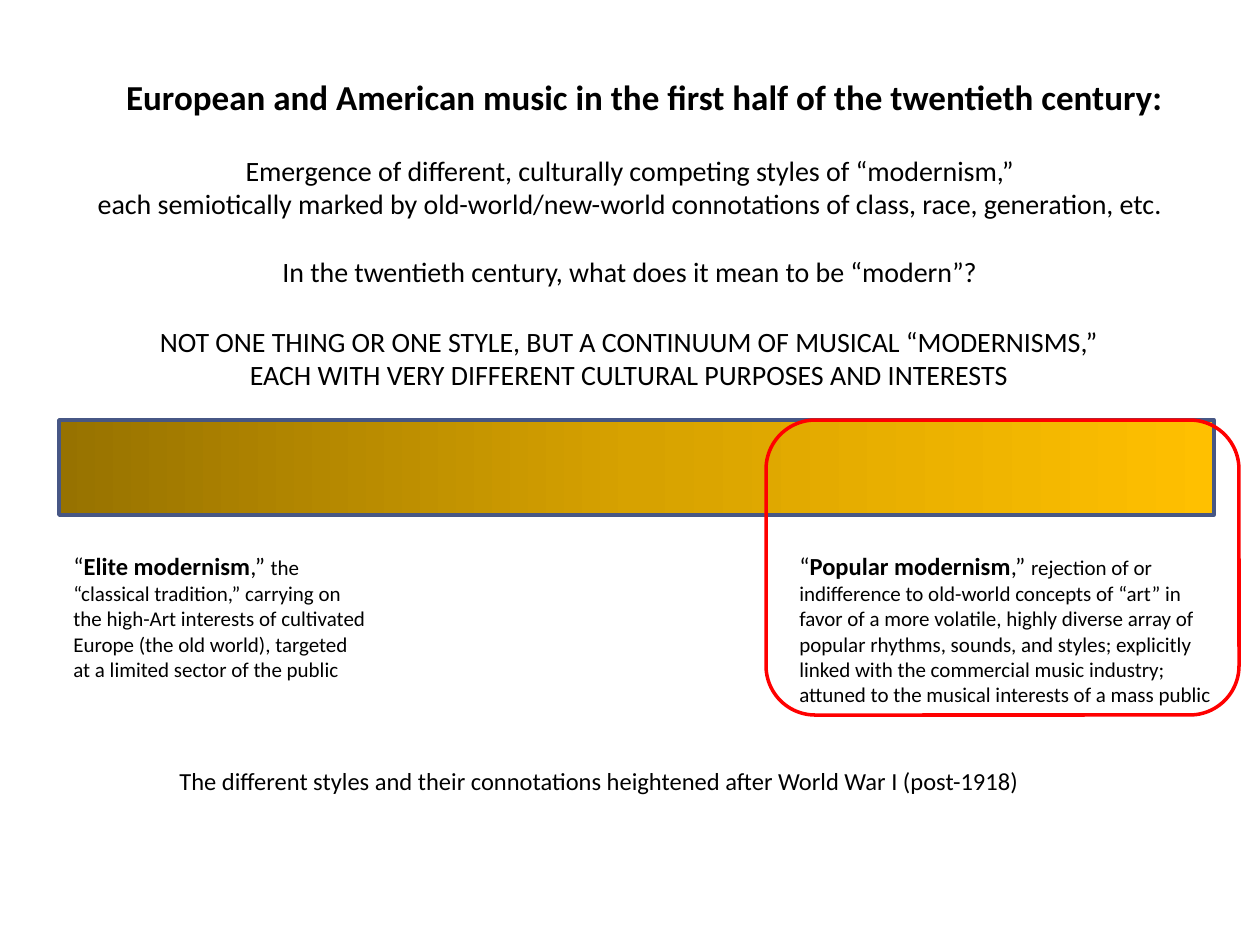
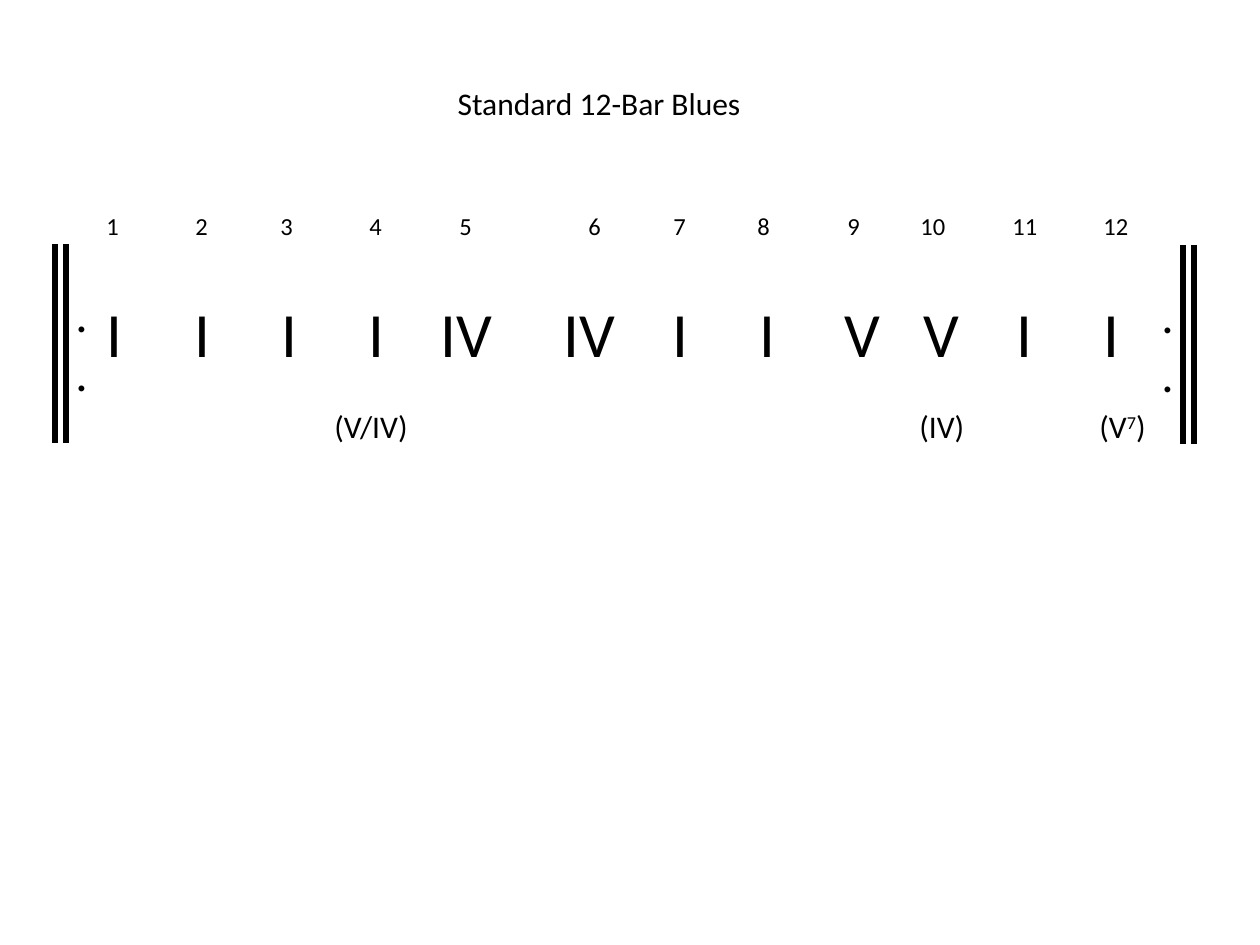
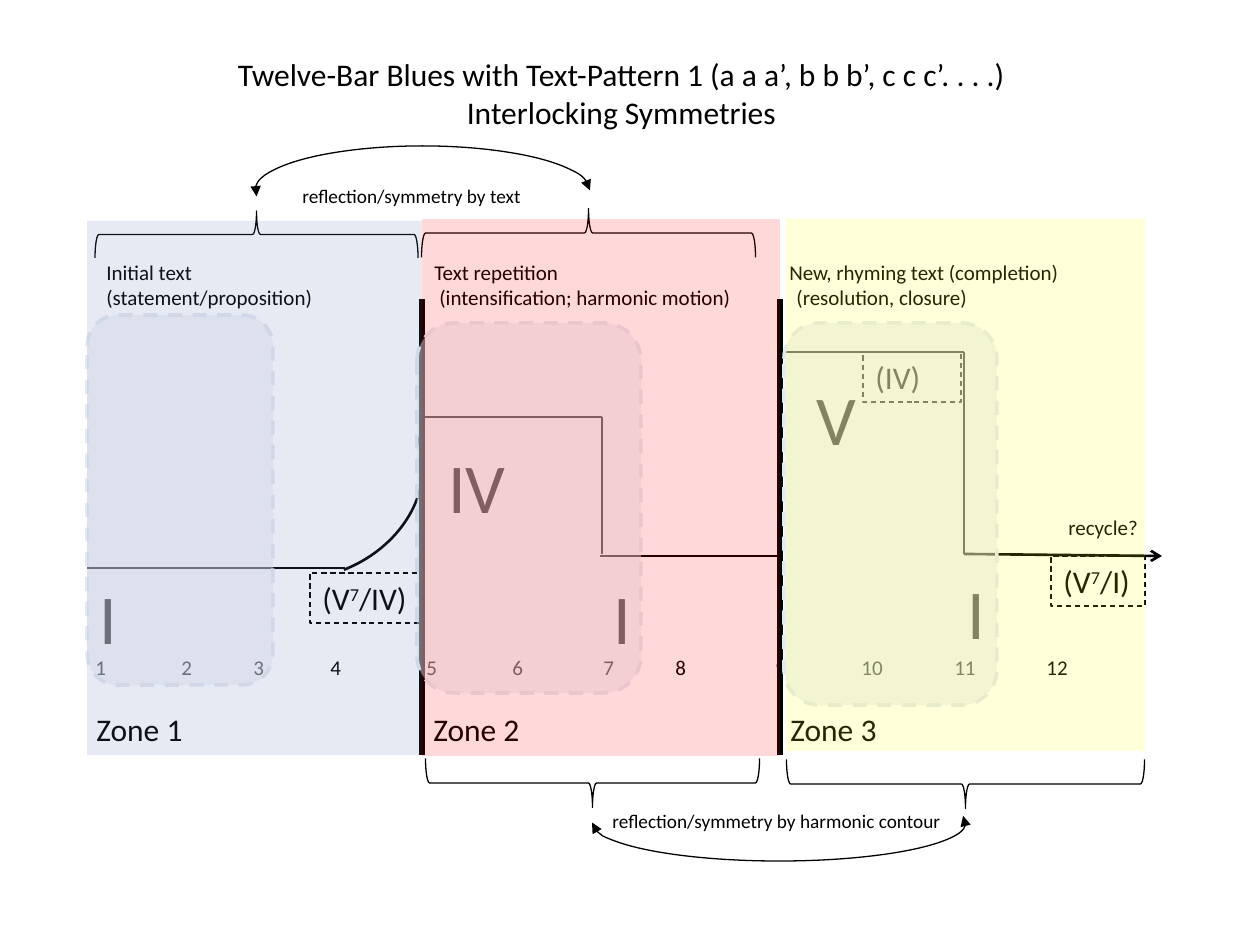
from copy import deepcopy

from lxml.etree import SubElement
from pptx import Presentation
from pptx.dml.color import RGBColor
from pptx.enum.dml import MSO_LINE
from pptx.enum.shapes import MSO_CONNECTOR, MSO_SHAPE
from pptx.enum.text import MSO_ANCHOR, MSO_AUTO_SIZE, PP_ALIGN
from pptx.oxml.ns import qn
from pptx.util import Emu, Pt

PX = 7257.14  # EMU in one px, 126 px to the inch
BLACK, WHITE, RED, YELLOW, BLUE = "000000", "FFFFFF", "FF0000", "FFFF00", "6076B4"
HALO, BAR_EDGE = "E4E9EF", "475785"
GOLDS = ["977200", "D7A200", "FFC000"]
FONT = "Calibri"
CENTER = PP_ALIGN.CENTER
SEVENTH = ("7", {"superscript": True})


def px(length):
    return Emu(round(length * PX))


def color(value):
    return RGBColor.from_string(value)


def format_run(run, size, superscript=False, **extra):
    values = {"name": FONT, "size": Pt(size), "bold": False, **extra}
    for name, value in values.items():
        setattr(run.font, name, value)
    run.font.color.rgb = color(BLACK)
    if superscript:
        run.font._element.set("baseline", "30000")


def write(shape, paragraphs, size, align=PP_ALIGN.LEFT, tabs=(), gaps=(), wrap=True, bold=False):
    """Each paragraph is a string or a list of strings and (string, format) runs.

    tabs holds one list of stops per paragraph; gaps lists paragraphs set off by a line.
    """
    frame = shape.text_frame
    values = {"word_wrap": wrap, "vertical_anchor": MSO_ANCHOR.TOP, "auto_size": MSO_AUTO_SIZE.NONE}
    for name, value in values.items():
        setattr(frame, name, value)
    for index, runs in enumerate(paragraphs):
        paragraph = frame.add_paragraph() if index else frame.paragraphs[0]
        if tabs:
            tab_list = SubElement(paragraph._p.get_or_add_pPr(), qn("a:tabLst"))
            for stop in tabs[index]:
                SubElement(tab_list, qn("a:tab"), pos=str(px(stop)), algn="l")
        paragraph.alignment = align
        if index in gaps:
            paragraph.space_before = Pt(size * 1.22)
        for item in [runs] if isinstance(runs, str) else runs:
            text, extra = (item, {}) if isinstance(item, str) else item
            run = paragraph.add_run()
            run.text = text
            format_run(run, **{"size": size, "bold": bold, **extra})


def style_line(shape, line_color, width, dash=None, head=None, tail=None):
    if line_color is None:
        shape.line.fill.background()
        return
    shape.line.color.rgb = color(line_color)
    shape.line.width = Pt(width)
    if dash:
        shape.line.dash_style = dash
    outline = shape._element.spPr.find(qn("a:ln"))
    for tag, kind in (("a:headEnd", head), ("a:tailEnd", tail)):
        if kind:
            SubElement(outline, qn(tag), type=kind)


class Region:
    """Draws on a slide, with places counted from the region's own corner."""

    def __init__(self, slide, left=0, top=0):
        self.slide, self.left, self.top = slide, left, top

    def place(self, left, top, width, height):
        return px(self.left + left), px(self.top + top), px(width), px(height)

    def text(self, box, paragraphs, size, **options):
        shape = self.slide.shapes.add_textbox(*self.place(*box))
        write(shape, paragraphs, size, **options)

    def shape(self, kind, box, fill=None, alpha=None, line=None, width=0.75, rotation=0, **ends):
        shape = self.slide.shapes.add_shape(kind, *self.place(*box))
        shape.shadow.inherit = False
        shape.rotation = rotation
        if fill:
            shape.fill.solid()
            shape.fill.fore_color.rgb = color(fill)
            if alpha:
                tint = shape._element.spPr.find(".//" + qn("a:srgbClr"))
                SubElement(tint, qn("a:alpha"), val=str(alpha * 1000))
        else:
            shape.fill.background()
        style_line(shape, line, width, **ends)
        return shape

    def line(self, x1, y1, x2, y2, width=1.5, **ends):
        points = self.place(x1, y1, 0, 0)[:2] + self.place(x2, y2, 0, 0)[:2]
        connector = self.slide.shapes.add_connector(MSO_CONNECTOR.STRAIGHT, *points)
        style_line(connector, BLACK, width, **ends)
        SubElement(connector._element.spPr, qn("a:effectLst"))


def add_titled_slide(presentation, box, lines, size, align=CENTER, bold=False):
    slide = presentation.slides.add_slide(presentation.slide_layouts[5])
    title = slide.shapes.title
    for name, value in zip(("left", "top", "width", "height"), map(px, box)):
        setattr(title, name, value)
    write(title, lines, size, align=align, bold=bold)
    return slide


# Slide 1: the continuum of modernisms
def draw_gradient_bar(region, box):
    bar = region.shape(MSO_SHAPE.RECTANGLE, box, line=BAR_EDGE, width=2)
    bar.fill.gradient()
    bar.fill.gradient_angle = 0
    stop_list = bar._element.spPr.find(".//" + qn("a:gsLst"))
    stop_list.append(deepcopy(stop_list[0]))
    for index, stop in enumerate(bar.fill.gradient_stops):
        stop.position = index / 2
        stop.color.rgb = color(GOLDS[index])


def draw_introduction(region):
    region.text((0, 0, 1168, 149), [
        "Emergence of different, culturally competing styles of “modernism,”",
        "each semiotically marked by old-world/new-world connotations of class, race, generation, etc.",
        "In the twentieth century, what does it mean to be “modern”?",
    ], 16, align=CENTER, gaps=[2])
    region.text((59, 171, 1048, 81), [
        "NOT ONE THING OR ONE STYLE, BUT A CONTINUUM OF MUSICAL “MODERNISMS,”",
        "EACH WITH VERY DIFFERENT CULTURAL PURPOSES AND INTERESTS",
    ], 16, align=CENTER)


def draw_continuum(region):
    def entry(term, description):
        large = {"size": 14}
        return [("“", large), (term, {"size": 14, "bold": True}), (",” ", large), description]

    draw_gradient_bar(region, (0, 0, 1155, 95))
    region.text((2, 125, 323, 144), [
        entry("Elite modernism", "the “classical tradition,” carrying on the high-Art interests "
              "of cultivated Europe (the old world), targeted"),
        "at a limited sector of the public",
    ], 12)
    region.text((728, 125, 451, 170), [
        entry("Popular modernism", "rejection of or indifference to old-world concepts of “art” in favor "
              "of a more volatile, highly diverse array of popular rhythms, sounds, and styles; explicitly "
              "linked with the commercial music industry; attuned to the musical interests of a mass public"),
    ], 12)
    region.shape(MSO_SHAPE.ROUNDED_RECTANGLE, (707, 0, 473, 295), line=RED, width=2)
    region.text((108, 340, 895, 43), [
        "The different styles and their connotations heightened after World War I (post-1918)"], 14)


# Slide 2: the twelve bars
def draw_twelve_bars(region):
    numbers = "\t".join(str(bar) for bar in range(1, 13))
    chords = "\t".join("I I I I IV IV I I V V I I".split())
    region.text((39, 0, 1092, 43), [numbers], 14,
                tabs=[[89, 174, 263, 353, 482, 567, 651, 741, 814, 906, 997]])
    region.text((39, 83, 1071, 92), [chords], 36,
                tabs=[[88, 175, 262, 334, 457, 566, 653, 738, 817, 910, 997]])
    region.text((267, 196, 882, 50), [["(V/IV)\t(IV)\t(V", SEVENTH, ")"]], 18, tabs=[[585, 765]])


def draw_repeat_sign(region, bar_x, dots_x):
    for x in (bar_x, bar_x + 11):
        region.line(x, 0, x, 199, width=3)
    region.text((dots_x, 33, 53, 131), [".", "."], 28)


# Slide 3: zones with harmonic contour
def draw_contour(region):
    region.line(0, 349, 258, 349)
    for x in (335, 693):
        region.line(x, 80, x, 536, width=3)
    region.shape(MSO_SHAPE.ARC, (125, 144, 193, 234), line=BLACK, width=1.5, rotation=68.5)
    for points in [(335, 198, 515, 198), (513, 337, 693, 337), (515, 335, 515, 198),
                   (697, 133, 877, 133), (877, 335, 877, 133)]:
        region.line(*points)
    region.line(877, 335, 1075, 337, tail="arrow")


def draw_chord_labels(region):
    for chord, left, top, width in [("IV", 349, 218, 118), ("I", 514, 349, 118), ("I", 0, 349, 118),
                                    ("V", 717, 150, 118), ("I", 868, 344, 59)]:
        region.text((left, top, width, 97), [chord], 40)
    region.text((-4, 429, 1116, 38), ["\t".join(str(bar) for bar in range(1, 13))], 12,
                tabs=[[86, 158, 235, 331, 417, 508, 580, 680, 766, 859, 951]])
    # Covers the unused start of the rising curve
    region.shape(MSO_SHAPE.RECTANGLE, (186, 125, 29, 108), fill=WHITE, line=WHITE, width=2)
    for runs, box in [(["(IV)"], (776, 133, 98, 50)),
                      (["(V", SEVENTH, "/IV)"], (223, 354, 112, 50)),
                      (["(V", SEVENTH, "/I)"], (964, 337, 94, 50))]:
        label = region.shape(MSO_SHAPE.RECTANGLE, box, line=BLACK, dash=MSO_LINE.DASH)
        write(label, [runs], 18, wrap=False)
    region.text((969, 289, 97, 38), ["recycle?"], 12)
    region.text((-3, 485, 1060, 50), ["Zone 1\tZone 2\tZone 3"], 18, tabs=[[337, 694]])


def draw_symmetries(region):
    for box in [(0, 96, 186, 370), (330, 104, 224, 370), (697, 104, 213, 382)]:
        region.shape(MSO_SHAPE.ROUNDED_RECTANGLE, box, fill=HALO, alpha=48,
                     line=HALO, width=2, dash=MSO_LINE.DASH)
    for box, rotation in [((146, -146, 47, 323), 90), ((477, -153, 49, 334), 90),
                          ((481, 397, 49, 334), 270), ((854, 386, 49, 358), 270)]:
        region.shape(MSO_SHAPE.LEFT_BRACE, box, line=BLACK, rotation=rotation)
    for box, rotation in [((168, -73, 335, 89), 0), ((505, 565, 374, 77), 180)]:
        arc = region.shape(MSO_SHAPE.ARC, box, line=BLACK, rotation=rotation,
                           head="triangle", tail="triangle")
        arc.adjustments[0] = 106.74
    region.text((203, -41, 266, 37), ["reflection/symmetry by text"], 11)
    region.text((513, 584, 375, 37), ["reflection/symmetry by harmonic contour"], 11)


def draw_zones(region):
    region.text((7, 34, 987, 63), [
        "Initial text\tText repetition\tNew, rhyming text (completion)",
        "(statement/proposition)\t(intensification; harmonic motion)\t(resolution, closure)",
    ], 12, tabs=[[328, 683], [333, 690]])
    for fill, box in [(BLUE, (0, 2, 335, 534)), (RED, (335, 0, 358, 537)), (YELLOW, (699, 0, 359, 532))]:
        region.shape(MSO_SHAPE.RECTANGLE, box, fill=fill, alpha=15)


def main():
    presentation = Presentation()
    presentation.slide_width, presentation.slide_height = px(1260), px(945)

    slide = add_titled_slide(presentation, (73, 69, 1143, 55), [
        "European and American music in the first half of the twentieth century:"], 20, bold=True)
    draw_introduction(Region(slide, 46, 147))
    draw_continuum(Region(slide, 59, 420))

    slide = add_titled_slide(presentation, (445, 78, 315, 50), ["Standard 12-Bar Blues"], 18,
                             align=PP_ALIGN.LEFT)
    draw_twelve_bars(Region(slide, 55, 205))
    draw_repeat_sign(Region(slide, 55, 244), 0, 8)
    draw_repeat_sign(Region(slide, 1149, 245), 34, 0)

    slide = add_titled_slide(presentation, (217, 49, 809, 89), [
        "Twelve-Bar Blues with Text-Pattern 1 (a a a’, b b b’, c c c’. . . .)",
        "Interlocking Symmetries"], 18)
    diagram = Region(slide, 87, 219)
    for draw in (draw_contour, draw_chord_labels, draw_symmetries, draw_zones):
        draw(diagram)

    presentation.save("out.pptx")


if __name__ == "__main__":
    main()
